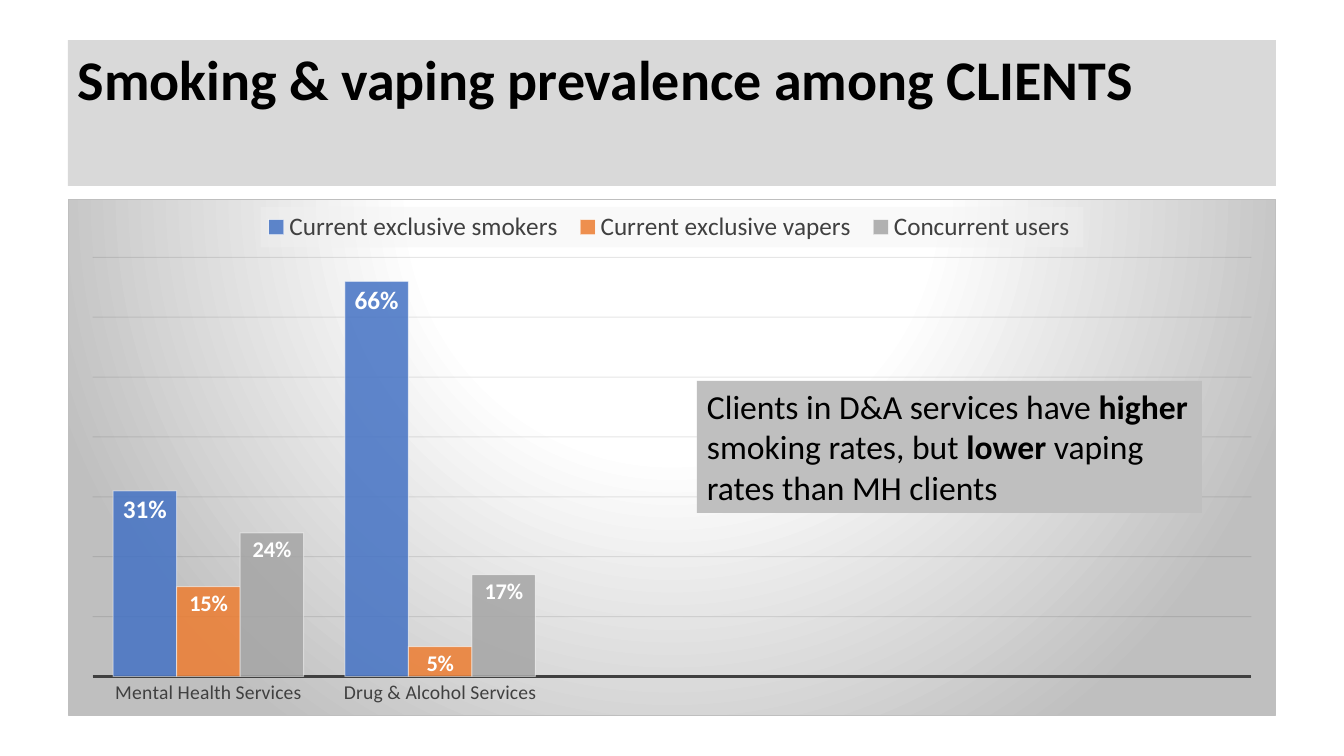
from lxml import etree
from pptx import Presentation
from pptx import util as u
from pptx.chart.data import CategoryChartData
from pptx.dml.color import RGBColor
from pptx.enum import chart as ch, shapes, text
from pptx.oxml import parse_xml
from pptx.oxml.ns import qn

# Content
TITLE = [("Smoking & vaping prevalence among CLIENTS", True)]
NOTE = [("Clients in D&A services have ", False), ("higher ", True),
        ("smoking rates, but ", False), ("lower ", True),
        ("vaping rates than MH clients", False)]
CATS = ["Mental Health Services", "Drug & Alcohol Services", "", "", ""]
SERIES = [  # name, values, colour, label size
    ("Current exclusive smokers ", (0.31, 0.66), "4472C4", 18),
    ("Current exclusive vapers ", (0.15, 0.05), "ED7D31", 16),
    ("Concurrent users ", (0.24, 0.17), "A5A5A5", 16),
]

# Places in px: left, top, width, height
SCALE = 914400 / 100.8
HEAD = (68, 40, 1208, 146)
CHART = (68, 199, 1208, 517)
PLOT = (92, 257, 1160, 420)
BOX = (697, 381, 505, 132)
FACE = "Calibri"
NS = ('xmlns:a="http://schemas.openxmlformats.org/drawingml/2006/main" '
      'xmlns:c="http://schemas.openxmlformats.org/drawingml/2006/chart"')


def px(n):
    return u.Emu(round(n * SCALE))


def rgb(code):
    return RGBColor.from_string(code)


def style(font, size, color, bold=False):
    font.name, font.size, font.bold = FACE, u.Pt(size), bold
    font.color.rgb = rgb(color)


def stroke(line, color, width):
    line.color.rgb = rgb(color)
    line.width = u.Pt(width)


def write(runs, place, fill, size, color="000000", top=5, gap=1.0):
    box = slide.shapes.add_shape(shapes.MSO_SHAPE.RECTANGLE, *map(px, place))
    box.shadow.inherit = False
    box.fill.solid()
    box.fill.fore_color.rgb = rgb(fill)
    box.line.fill.background()
    frame = box.text_frame
    frame.word_wrap = True
    frame.margin_top = px(top)
    frame.vertical_anchor = text.MSO_ANCHOR.TOP
    para = frame.paragraphs[0]
    para.alignment = text.PP_ALIGN.LEFT
    para.line_spacing = gap
    for words, bold in runs:
        run = para.add_run()
        run.text = words
        style(run.font, size, color, bold)


def fade(root, levels):
    for node in root.iter(qn("a:srgbClr")):
        if node.get("val") in levels:
            level = str(levels[node.get("val")] * 1000)
            etree.SubElement(node, qn("a:alpha")).set("val", level)


deck = Presentation()
deck.slide_width, deck.slide_height = px(1344), px(756)
slide = deck.slides.add_slide(deck.slide_layouts[6])

# Title band
write(TITLE, HEAD, "D9D9D9", 40, top=12, gap=0.9)

# Chart
data = CategoryChartData(number_format="0%")
data.categories = CATS
for name, vals, _, _ in SERIES:
    data.add_series(name, vals + (None,) * (len(CATS) - len(vals)))
chart = slide.shapes.add_chart(ch.XL_CHART_TYPE.COLUMN_CLUSTERED,
                               *map(px, CHART), data).chart
root = chart.plots[0].categories and chart._chartSpace
style(chart.font, 10, "000000")
chart.has_title = False
plot = chart.plots[0]
plot.gap_width, plot.overlap, plot.vary_by_categories = 65, 0, False

# Axes
vert, base = chart.value_axis, chart.category_axis
vert.minimum_scale, vert.maximum_scale, vert.major_unit = 0, 0.7, 0.1
vert.has_major_gridlines = True
stroke(vert.major_gridlines.format.line, "0D0D0D", 0.75)
vert.visible = False
base.major_tick_mark = ch.XL_TICK_MARK.NONE
stroke(base.format.line, "404040", 1.5)
style(base.tick_labels.font, 14, "404040")

# Bars, made see-through before the white labels are added
for bar, (_, _, color, _) in zip(plot.series, SERIES):
    bar.format.fill.solid()
    bar.format.fill.fore_color.rgb = rgb(color)
    stroke(bar.format.line, "FFFFFF", 0.75)
fade(root, {"0D0D0D": 10, "FFFFFF": 50, **{row[2]: 85 for row in SERIES}})
for bar, (_, _, _, size) in zip(plot.series, SERIES):
    tags = bar.data_labels
    tags.show_value = True
    tags.number_format, tags.number_format_is_linked = "0%", False
    tags.position = ch.XL_LABEL_POSITION.INSIDE_END
    style(tags.font, size, "FFFFFF", True)

# Legend
chart.has_legend = True
key = chart.legend
key.position = ch.XL_LEGEND_POSITION.TOP
key.include_in_layout = False
style(key.font, 18, "404040")
root.find(".//" + qn("c:legend")).find(qn("c:txPr")).addprevious(parse_xml(
    f'<c:spPr {NS}><a:solidFill><a:srgbClr val="F2F2F2"><a:alpha val="39000"/>'
    '</a:srgbClr></a:solidFill></c:spPr>'))

# Plot area place, as shares of the chart
shares = {"x": (PLOT[0] - CHART[0]) / CHART[2], "y": (PLOT[1] - CHART[1]) / CHART[3],
          "w": PLOT[2] / CHART[2], "h": PLOT[3] / CHART[3]}
area = root.find(".//" + qn("c:plotArea"))
for old in area.findall(qn("c:layout")):
    area.remove(old)
area.insert(0, parse_xml(
    f'<c:layout {NS}><c:manualLayout><c:layoutTarget val="inner"/>'
    '<c:xMode val="edge"/><c:yMode val="edge"/>'
    + "".join(f'<c:{k} val="{v:.4f}"/>' for k, v in shares.items())
    + '</c:manualLayout></c:layout>'))

# Chart ground: round gradient with a thin border
stops = "".join(f'<a:gs pos="{at}000"><a:srgbClr val="{color}"/></a:gs>'
                for at, color in ((0, "FFFFFF"), (39, "FFFFFF"), (100, "BFBFBF")))
root.find(qn("c:chart")).addnext(parse_xml(
    f'<c:spPr {NS}><a:gradFill><a:gsLst>{stops}</a:gsLst><a:path path="circle">'
    '<a:fillToRect l="50000" t="-80000" r="50000" b="180000"/></a:path></a:gradFill>'
    '<a:ln w="9525"><a:solidFill><a:srgbClr val="BFBFBF"/></a:solidFill></a:ln>'
    '</c:spPr>'))

# Remark
write(NOTE, BOX, "BFBFBF", 24)

deck.save("out.pptx")
